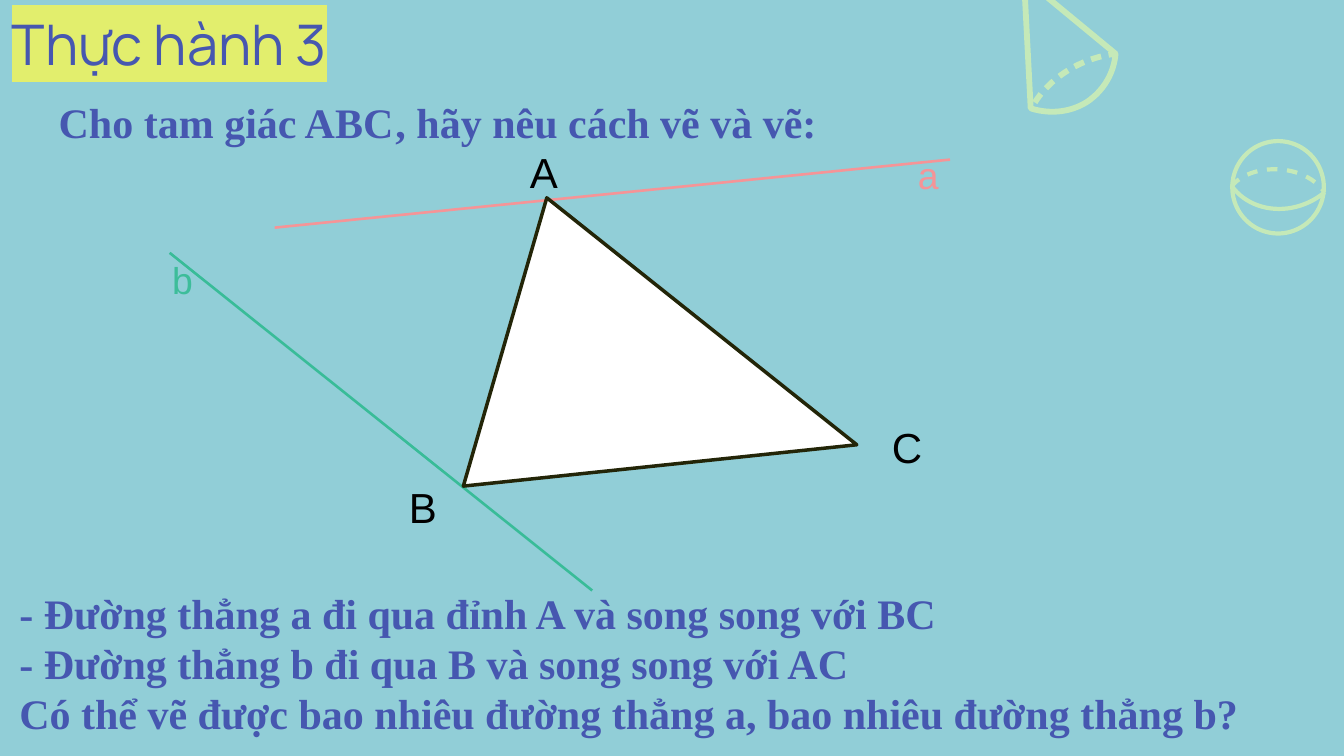
from typing import NamedTuple

from pptx import Presentation
from pptx.dml.color import RGBColor
from pptx.enum.shapes import MSO_CONNECTOR, MSO_SHAPE
from pptx.enum.text import MSO_ANCHOR, MSO_AUTO_SIZE, PP_ALIGN
from pptx.oxml.ns import qn
from pptx.util import Emu, Inches, Pt
from lxml.etree import SubElement

# Grid: 16 columns by 9 rows over the whole slide
COLS, ROWS = 16, 9
prs = Presentation()
prs.slide_width, prs.slide_height = Inches(16), Inches(9)

SKY = RGBColor(0x91, 0xCE, 0xD7)
INDIGO = RGBColor(0x46, 0x57, 0xB0)
LEAF = RGBColor(0xC5, 0xE9, 0xB8)
GREEN = RGBColor(0x39, 0xBC, 0x98)
GREEN_TEXT = RGBColor(0x3D, 0xBD, 0x9A)
PINK = RGBColor(0xF5, 0x94, 0x97)
OLIVE = RGBColor(0x23, 0x25, 0x08)
BLACK = RGBColor(0, 0, 0)
WHITE = RGBColor(0xFF, 0xFF, 0xFF)
HIGHLIGHT = "E2EE6D"
SERIF, SANS, DISPLAY = "Times New Roman", "Arial", "Manrope"

Point = tuple[float, float]


class Label(NamedTuple):
    text: str
    x: float
    y: float
    w: float
    h: float = 0.71
    size: int = 36
    font: str = SANS
    color: RGBColor = BLACK
    bold: bool = False


class Line(NamedTuple):
    start: Point
    end: Point
    color: RGBColor


class Curve(NamedTuple):
    start: Point
    beziers: list[tuple[Point, Point, Point]]
    width: float
    dash: tuple[int, int] | None = None  # dash and gap, in percent of width
    apex: Point | None = None  # closes the outline through this point


LABELS = [
    Label("Cho tam giác ABC", 0.6, 1.1, 14.24, font=SERIF, color=INDIGO, bold=True),
    Label(", hãy nêu cách vẽ và vẽ:", 4.61, 1.1, 10.29, font=SERIF, color=INDIGO, bold=True),
    Label("A", 6.21, 1.69, 0.67),
    Label("B", 4.77, 5.68, 0.67),
    Label("C", 10.52, 4.97, 0.67),
    Label("a", 10.83, 1.76, 0.45, 0.64, 32, color=PINK),
    Label("b", 1.95, 3.01, 0.45, 0.64, 32, color=GREEN_TEXT),
]
LINES = [
    Line((2.02, 3.01), (7.05, 7.03), GREEN),
    Line((3.27, 2.71), (11.31, 1.9), PINK),
]
CURVES = [
    # Cone: outline, then hidden edge of its base
    Curve((12.27, 1.29), [((12.49, 1.36), (12.73, 1.34), (12.93, 1.22)),
                          ((13.13, 1.09), (13.26, 0.88), (13.28, 0.64))], 5, apex=(12.19, -0.26)),
    Curve((12.32, 1.22), [((12.51, 0.92), (12.87, 0.69), (13.28, 0.64))], 5, (180, 130)),
    # Sphere: front and hidden halves of the equator
    Curve((14.66, 2.21), [((14.9, 2.55), (15.42, 2.58), (15.77, 2.29))], 3.6),
    Curve((14.66, 2.22), [((14.88, 1.94), (15.52, 1.93), (15.77, 2.29))], 3.6, (250, 230)),
]
TASKS = [
    "- Đường thẳng a đi qua đỉnh A và song song với BC",
    "- Đường thẳng b đi qua B và song song với AC",
    "Có thể vẽ được bao nhiêu đường thẳng a, bao nhiêu đường thẳng b?",
]


def col(n: float) -> Emu:
    return Emu(round(prs.slide_width * n / COLS))


def row(n: float) -> Emu:
    return Emu(round(prs.slide_height * n / ROWS))


def place(sp, x: float, y: float, w: float, h: float) -> None:
    sp.left, sp.top, sp.width, sp.height = col(x), row(y), col(w), row(h)


def write(p, text: str, *, size: int, font: str, color: RGBColor, bold: bool = False):
    p.alignment = PP_ALIGN.LEFT
    r = p.add_run()
    r.text = text
    r.font.size, r.font.name, r.font.bold = Pt(size), font, bold
    r.font.color.rgb = color
    return r


def add_label(slide, label: Label) -> None:
    sp = slide.shapes.add_textbox(col(label.x), row(label.y), col(label.w), row(label.h))
    sp.text_frame.word_wrap = True
    write(sp.text_frame.paragraphs[0], label.text, size=label.size, font=label.font,
          color=label.color, bold=label.bold)


def add_line(slide, line: Line) -> None:
    (x1, y1), (x2, y2) = line.start, line.end
    sp = slide.shapes.add_connector(MSO_CONNECTOR.STRAIGHT, col(x1), row(y1), col(x2), row(y2))
    sp.line.color.rgb, sp.line.width = line.color, Pt(2.25)
    SubElement(sp.element.spPr, qn("a:effectLst"))


def outline(sp, color: RGBColor, width: float) -> None:
    sp.shadow.inherit = False
    sp.fill.background()
    sp.line.color.rgb, sp.line.width = color, Pt(width)


def sample(start: Point, bezier: tuple[Point, Point, Point], steps: int = 24) -> list[Point]:
    """Points along a cubic Bezier curve, without its start."""
    pts = (start, *bezier)
    points = []
    for i in range(1, steps + 1):
        t = i / steps
        weights = ((1 - t) ** 3, 3 * t * (1 - t) ** 2, 3 * t * t * (1 - t), t ** 3)
        points.append((sum(k * p[0] for k, p in zip(weights, pts)),
                       sum(k * p[1] for k, p in zip(weights, pts))))
    return points


def add_curve(slide, curve: Curve) -> None:
    points = [curve.start]
    for bezier in curve.beziers:
        points += sample(points[-1], bezier)
    if curve.apex:
        points.append(curve.apex)
    (x0, y0), *rest = points
    builder = slide.shapes.build_freeform(col(x0), row(y0))
    builder.add_line_segments([(col(x), row(y)) for x, y in rest], close=bool(curve.apex))
    sp = builder.convert_to_shape()
    outline(sp, LEAF, curve.width)
    ln = sp.line._get_or_add_ln()
    if curve.dash:
        dash, gap = curve.dash
        SubElement(SubElement(ln, qn("a:custDash")), qn("a:ds"),
                   d=str(dash * 1000), sp=str(gap * 1000))
    SubElement(ln, qn("a:round"))


def fill_title(sp) -> None:
    place(sp, 0.04, 0.01, 5.69, 0.66)
    tf = sp.text_frame
    tf.auto_size, tf.vertical_anchor = MSO_AUTO_SIZE.NONE, MSO_ANCHOR.TOP
    tf.margin_top = row(0.1)
    r = write(tf.paragraphs[0], "Thực hành 3", size=48, font=DISPLAY, color=INDIGO)
    rPr = r.font._element
    highlight = SubElement(rPr, qn("a:highlight"))
    SubElement(highlight, qn("a:srgbClr"), val=HIGHLIGHT)
    rPr.find(qn("a:solidFill")).addnext(highlight)


def fill_tasks(sp) -> None:
    # Wide enough to keep the closing question on one line
    place(sp, 0.13, 6.94, 15.6, 1.92)
    tf = sp.text_frame
    tf.auto_size, tf.vertical_anchor = MSO_AUTO_SIZE.NONE, MSO_ANCHOR.TOP
    tf.word_wrap = True
    for i, task in enumerate(TASKS):
        p = tf.add_paragraph() if i else tf.paragraphs[0]
        p.space_before = Pt(0)
        write(p, task, size=36, font=SERIF, color=INDIGO, bold=True)
        pPr = p._p.get_or_add_pPr()
        pPr.set("marL", "0")
        pPr.set("indent", "0")
        SubElement(pPr, qn("a:buNone"))


def main() -> None:
    slide = prs.slides.add_slide(prs.slide_layouts[1])
    slide.background.fill.solid()
    slide.background.fill.fore_color.rgb = SKY
    fill_title(slide.shapes.title)
    fill_tasks(slide.placeholders[1])

    # Decorations
    for curve in CURVES:
        add_curve(slide, curve)
    sphere = slide.shapes.add_shape(MSO_SHAPE.OVAL, col(14.67), row(1.68), col(1.09), row(1.1))
    outline(sphere, LEAF, 3.6)

    # Lines a and b, then triangle ABC over them
    for line in LINES:
        add_line(slide, line)
    triangle = slide.shapes.add_shape(MSO_SHAPE.ISOSCELES_TRIANGLE,
                                      col(5.33), row(2.24), col(4.71), row(3.31))
    triangle.adjustments[0] = 0.286
    triangle.rotation = 354
    outline(triangle, OLIVE, 3)
    triangle.fill.solid()
    triangle.fill.fore_color.rgb = WHITE

    for label in LABELS:
        add_label(slide, label)
    prs.save("out.pptx")


if __name__ == "__main__":
    main()
